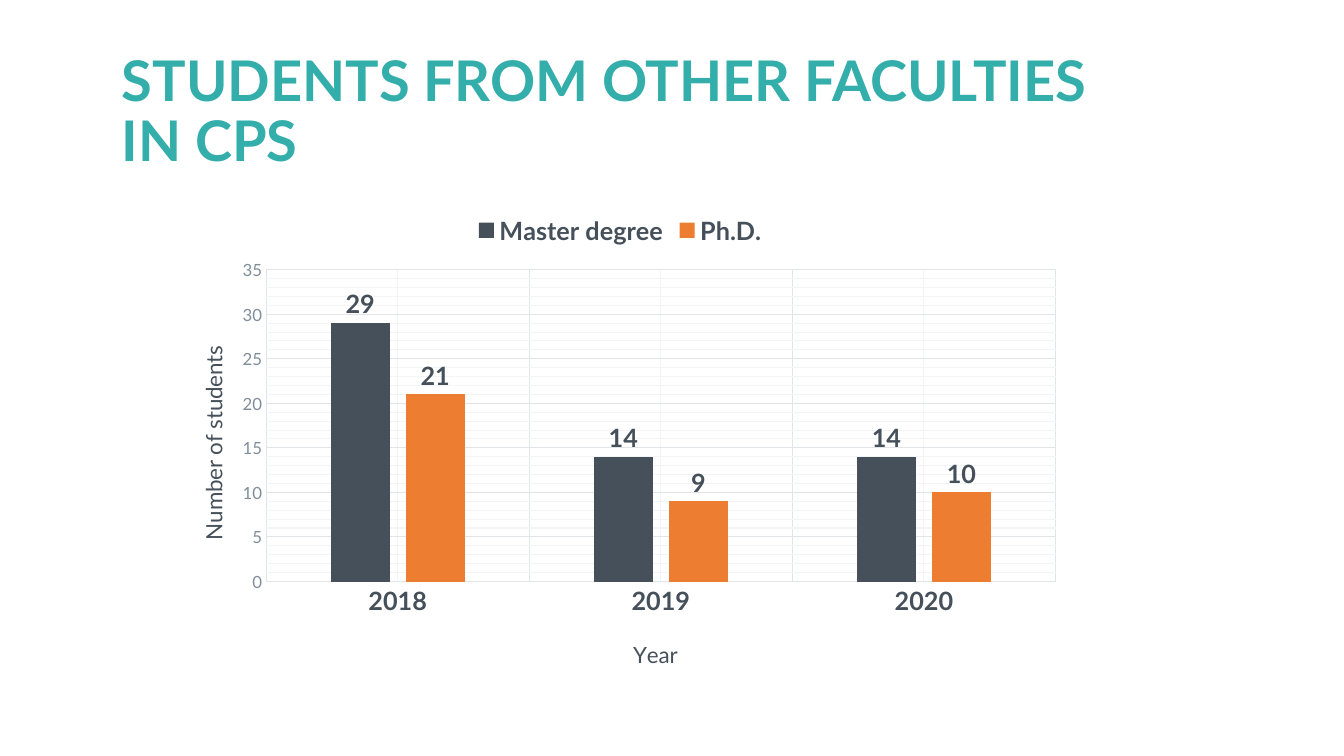
from lxml import etree
from pptx import Presentation
from pptx.chart.data import CategoryChartData
from pptx.dml.color import RGBColor
from pptx.enum.chart import XL_CHART_TYPE, XL_LABEL_POSITION, XL_LEGEND_POSITION, XL_TICK_MARK
from pptx.enum.text import MSO_ANCHOR
from pptx.oxml import parse_xml
from pptx.util import Inches, Pt

COLUMNS = XL_CHART_TYPE.COLUMN_CLUSTERED
OUTSIDE = XL_LABEL_POSITION.OUTSIDE_END
LEGEND_TOP = XL_LEGEND_POSITION.TOP
NO_TICK = XL_TICK_MARK.NONE
MIDDLE = MSO_ANCHOR.MIDDLE

C = "http://schemas.openxmlformats.org/drawingml/2006/chart"
A = "http://schemas.openxmlformats.org/drawingml/2006/main"
TEAL, SLATE, ORANGE = "33AEAB", "46505A", "ED7D31"
GREY, GRID, MINOR_GRID = "7F8D9B", "E1E5E8", "F3F4F6"

YEARS = ["2018", "2019", "2020"]
STUDENTS = [("Master degree", [29, 14, 14], SLATE), ("Ph.D.", [21, 9, 10], ORANGE)]


def rgb(value):
    return RGBColor.from_string(value)


def style_font(font, size, color, bold=False):
    font.name = "Lato"
    font.size = Pt(size)
    font.bold = bold
    font.color.rgb = rgb(color)


def style_line(line, color):
    line.color.rgb = rgb(color)
    line.width = Pt(0.75)


def style_minor_grid(axis, color):
    axis.has_minor_gridlines = True
    axis._element.find(f"{{{C}}}minorGridlines").append(parse_xml(
        f'<c:spPr xmlns:c="{C}" xmlns:a="{A}"><a:ln w="{Pt(0.75)}"><a:solidFill>'
        f'<a:srgbClr val="{color}"/></a:solidFill></a:ln></c:spPr>'))


def write(tf, text, size, color, bold=False, spacing=None):
    p = tf.paragraphs[0]
    p.line_spacing = spacing
    for i, line in enumerate(text.split("\n")):
        if i:
            p.add_line_break()
        r = p.add_run()
        r.text = line
        style_font(r.font, size, color, bold)


def set_layout(element, index, **fractions):
    """Place a chart part by fractions of the chart's size."""
    for old in element.findall(f"{{{C}}}layout"):
        element.remove(old)
    layout = parse_xml(f'<c:layout xmlns:c="{C}"><c:manualLayout/></c:layout>')
    values = {"xMode": "edge", "yMode": "edge", **fractions}
    if "w" in fractions:
        values = {"layoutTarget": "inner", **values}
    for name, value in values.items():
        etree.SubElement(layout[0], f"{{{C}}}{name}").set("val", str(value))
    element.insert(index, layout)


class Deck:
    def __init__(self):
        self.prs = Presentation()
        self.prs.slide_width, self.prs.slide_height = Inches(13.33), Inches(7.5)
        self.s = self.prs.slides.add_slide(self.prs.slide_layouts[6])

    def title(self, text, left, top, width, height):
        tf = self.s.shapes.add_textbox(*map(Inches, (left, top, width, height))).text_frame
        tf.word_wrap = True
        tf.vertical_anchor = MIDDLE
        write(tf, text, 40, TEAL, bold=True, spacing=0.9)

    def axis(self, axis, title, x, y, size, color, bold=False):
        axis.major_tick_mark = axis.minor_tick_mark = NO_TICK
        style_font(axis.tick_labels.font, size, color, bold)
        axis.has_major_gridlines = True
        style_line(axis.major_gridlines.format.line, GRID)
        style_minor_grid(axis, MINOR_GRID)
        write(axis.axis_title.text_frame, title, 16, SLATE)
        set_layout(axis.axis_title._element, 1, x=x, y=y)

    def column_chart(self, categories, series, left, top, width, height):
        data = CategoryChartData()
        data.categories = categories
        for name, values, _ in series:
            data.add_series(name, values)
        frame = self.s.shapes.add_chart(COLUMNS, *map(Inches, (left, top, width, height)), data)
        chart = frame.chart
        chart.has_title = False
        style_font(chart.font, 10, SLATE)
        chart.has_legend = True
        chart.legend.position = LEGEND_TOP
        chart.legend.include_in_layout = False
        style_font(chart.legend.font, 18, SLATE, bold=True)

        plot = chart.plots[0]
        plot.gap_width, plot.overlap = 219, -27
        plot.vary_by_categories = False
        for bars, (_, _, color) in zip(plot.series, series):
            bars.format.fill.solid()
            bars.format.fill.fore_color.rgb = rgb(color)
            labels = bars.data_labels
            labels.show_value = True
            labels.position = OUTSIDE
            style_font(labels.font, 18, SLATE, bold=True)
        plot_area = chart._chartSpace.find(f".//{{{C}}}plotArea")
        set_layout(plot_area, 0, x=0.11, y=0.14, w=0.87, h=0.65)
        return chart


def main():
    deck = Deck()
    deck.title("STUDENTS FROM OTHER FACULTIES\nIN CPS", 1.11, 0.4, 11.31, 1.45)
    chart = deck.column_chart(YEARS, STUDENTS, 1.65, 2.01, 9, 4.76)

    years = chart.category_axis
    deck.axis(years, "Year", 0.51, 0.9, 18, SLATE, bold=True)
    style_line(years.format.line, GRID)

    counts = chart.value_axis
    deck.axis(counts, "Number of students", 0.03, 0.29, 12, GREY)
    counts.format.line.fill.background()
    counts.minimum_scale, counts.maximum_scale = 0, 35
    counts.major_unit, counts.minor_unit = 5, 1

    deck.prs.save("out.pptx")


if __name__ == "__main__":
    main()
